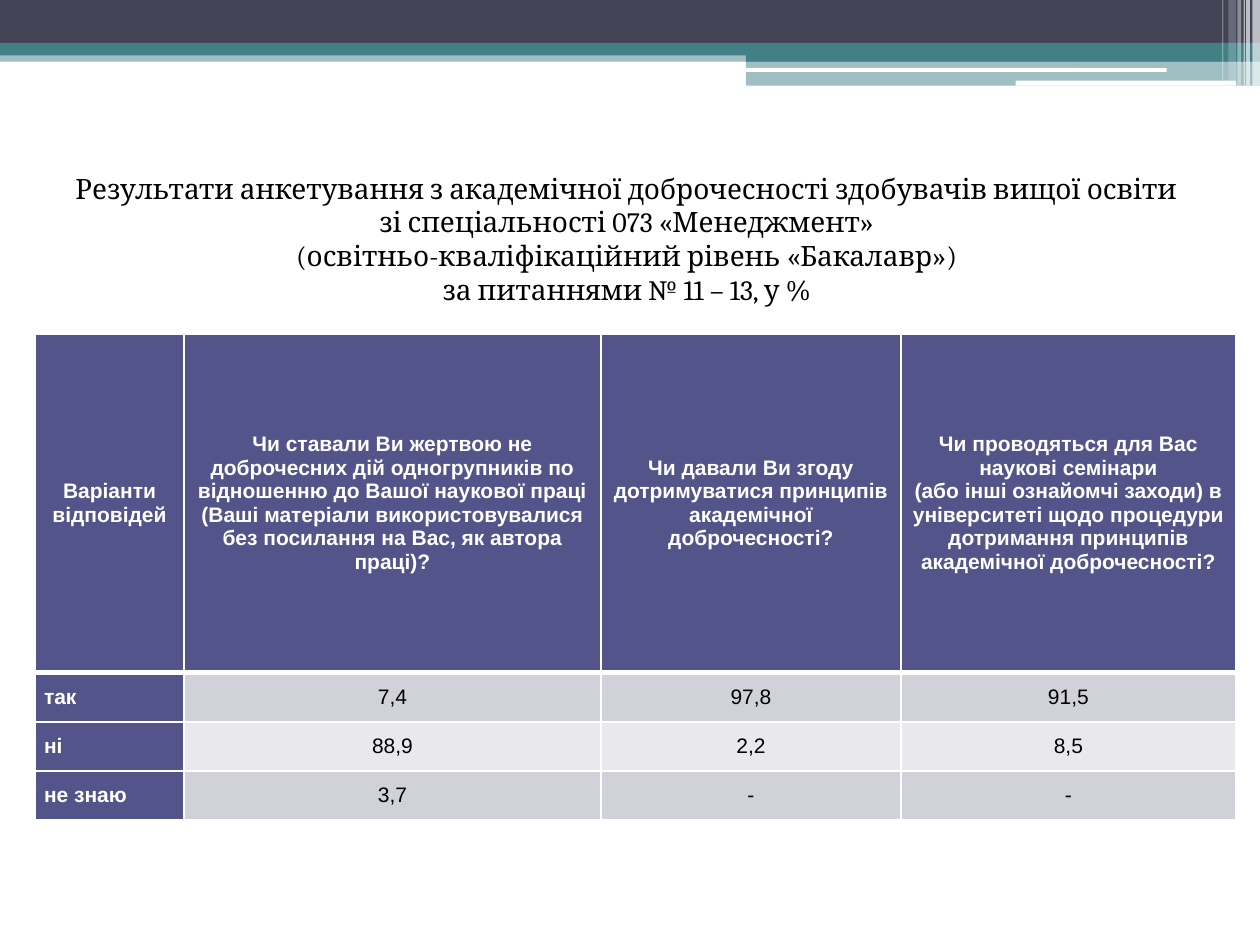
from lxml.etree import SubElement
from pptx import Presentation
from pptx.dml.color import RGBColor
from pptx.enum.shapes import MSO_SHAPE as Shape
from pptx.enum.text import MSO_ANCHOR as Anchor, MSO_AUTO_SIZE as AutoSize, PP_ALIGN as Align
from pptx.oxml.ns import qn
from pptx.util import Inches, Pt

WHITE = RGBColor(0xFF, 0xFF, 0xFF)
BLACK = RGBColor(0x00, 0x00, 0x00)
SLATE = RGBColor(0x42, 0x44, 0x56)
TEAL = RGBColor(0x43, 0x80, 0x86)
INDIGO = RGBColor(0x53, 0x54, 0x8A)
BAND_DARK = RGBColor(0xD1, 0xD1, 0xDA)
BAND_LIGHT = RGBColor(0xE9, 0xE9, 0xED)

COLUMNS, ROWS = 100, 75

BANDS = [
    ((0, 4, 100, 0.9), TEAL, 50),
    ((0, 0, 100, 3.4), SLATE, 100),
    ((0, 3.4, 100, 1), TEAL, 100),
    ((59.2, 3.9, 40.8, 1), TEAL, 100),
    ((59.2, 4.8, 40.8, 2), TEAL, 50),
]
RULES = [(59.1, 5.4, 33.5, 0.3), (80.6, 6.4, 17.5, 0.4)]
STRIPES = [
    (99.4, 0.6, 6.8, 65),
    (98.9, 0.3, 6.8, 65),
    (98.7, 0.1, 6.8, 60),
    (98.2, 0.3, 6.8, 40),
    (97.5, 0.6, 6.4, 20),
    (97, 0.1, 6.4, 30),
]

TITLE = [
    "Результати анкетування з академічної доброчесності здобувачів вищої освіти",
    "зі спеціальності 073 «Менеджмент»",
    "(освітньо-кваліфікаційний рівень «Бакалавр»)",
    "за питаннями № 11 – 13, у %",
]
ANSWERS = [
    [
        "Варіанти відповідей",
        "Чи ставали Ви жертвою не доброчесних дій одногрупників по відношенню до Вашої "
        "наукової праці (Ваші матеріали використовувалися без посилання на Вас, як автора праці)?",
        "Чи давали Ви згоду дотримуватися принципів академічної доброчесності?",
        "Чи проводяться для Вас наукові семінари\n(або інші ознайомчі заходи) в університеті "
        "щодо процедури дотримання принципів академічної доброчесності?",
    ],
    ["так", "7,4", "97,8", "91,5"],
    ["ні", "88,9", "2,2", "8,5"],
    ["не знаю", "3,7", "-", "-"],
]


class SurveySlide:
    """Holds the style and the current slide, measured on a 100 by 75 grid."""

    title_font, title_size = "Cambria", Pt(16)
    table_font, table_size = "Arial", Pt(12)

    def __init__(self, presentation):
        self.column = presentation.slide_width / COLUMNS
        self.row = presentation.slide_height / ROWS
        self.slide = presentation.slides.add_slide(presentation.slide_layouts[5])

    def box(self, left, top, width, height):
        return (round(left * self.column), round(top * self.row),
                round(width * self.column), round(height * self.row))

    def bar(self, area, color, opacity=100, kind=Shape.RECTANGLE):
        shape = self.slide.shapes.add_shape(kind, *self.box(*area))
        shape.shadow.inherit = False
        shape.line.fill.background()
        shape.fill.solid()
        shape.fill.fore_color.rgb = color
        if opacity < 100:
            fill = shape._element.spPr.find(qn("a:solidFill"))
            SubElement(fill[0], qn("a:alpha"), val=str(opacity * 1000))

    def title(self, area, lines):
        shape = self.slide.shapes.title
        shape.left, shape.top, shape.width, shape.height = self.box(*area)
        frame = shape.text_frame
        frame.text = "\n".join(lines)
        frame.word_wrap = True
        frame.auto_size = AutoSize.NONE
        frame.vertical_anchor = Anchor.TOP
        for paragraph in frame.paragraphs:
            self.format(paragraph, self.title_font, self.title_size, BLACK)

    def table(self, area, widths, heights, rows):
        shape = self.slide.shapes.add_table(len(rows), len(widths), *self.box(*area))
        table = shape.table
        for column, width in zip(table.columns, widths):
            column.width = round(width * self.column)
        for row, height in zip(table.rows, heights):
            row.height = round(height * self.row)
        for row_index, texts in enumerate(rows):
            for column_index, text in enumerate(texts):
                self.cell(table.cell(row_index, column_index), text, row_index, column_index)

    def cell(self, cell, text, row_index, column_index):
        is_header = row_index == 0
        is_label = is_header or column_index == 0
        self.borders(cell, top=3 if row_index == 1 else 1, bottom=3 if is_header else 1)
        cell.fill.solid()
        band = BAND_DARK if row_index % 2 else BAND_LIGHT
        cell.fill.fore_color.rgb = INDIGO if is_label else band
        cell.margin_left = cell.margin_right = Inches(0.07)
        cell.margin_top = cell.margin_bottom = 0
        cell.vertical_anchor = Anchor.MIDDLE
        cell.text = text
        align = Align.LEFT if is_label and not is_header else Align.CENTER
        for paragraph in cell.text_frame.paragraphs:
            self.format(paragraph, self.table_font, self.table_size,
                        WHITE if is_label else BLACK, is_label, align)

    def borders(self, cell, top, bottom):
        properties = cell._tc.get_or_add_tcPr()
        for side, width in (("L", 1), ("R", 1), ("T", top), ("B", bottom)):
            line = SubElement(properties, qn(f"a:ln{side}"), w=str(Pt(width)))
            fill = SubElement(line, qn("a:solidFill"))
            SubElement(fill, qn("a:srgbClr"), val=str(WHITE))

    def format(self, paragraph, name, size, color, bold=False, align=Align.CENTER):
        paragraph.alignment = align
        font = paragraph.font
        font.name, font.size, font.bold = name, size, bold
        font.color.rgb = color


def main():
    presentation = Presentation()
    presentation.slide_width, presentation.slide_height = Inches(10), Inches(7.5)
    survey = SurveySlide(presentation)
    for area, color, opacity in BANDS:
        survey.bar(area, color, opacity)
    for area in RULES:
        survey.bar(area, WHITE, kind=Shape.ROUNDED_RECTANGLE)
    for left, width, height, opacity in STRIPES:
        survey.bar((left, 0, width, height), WHITE, opacity)
    survey.title((3.3, 13.1, 92.9, 14.5), TITLE)
    survey.table((2.8, 26.5, 95.3, 38.6), (11.8, 33.1, 23.8, 26.6),
                 (26.9, 3.9, 3.9, 3.9), ANSWERS)
    presentation.save("out.pptx")


if __name__ == "__main__":
    main()
